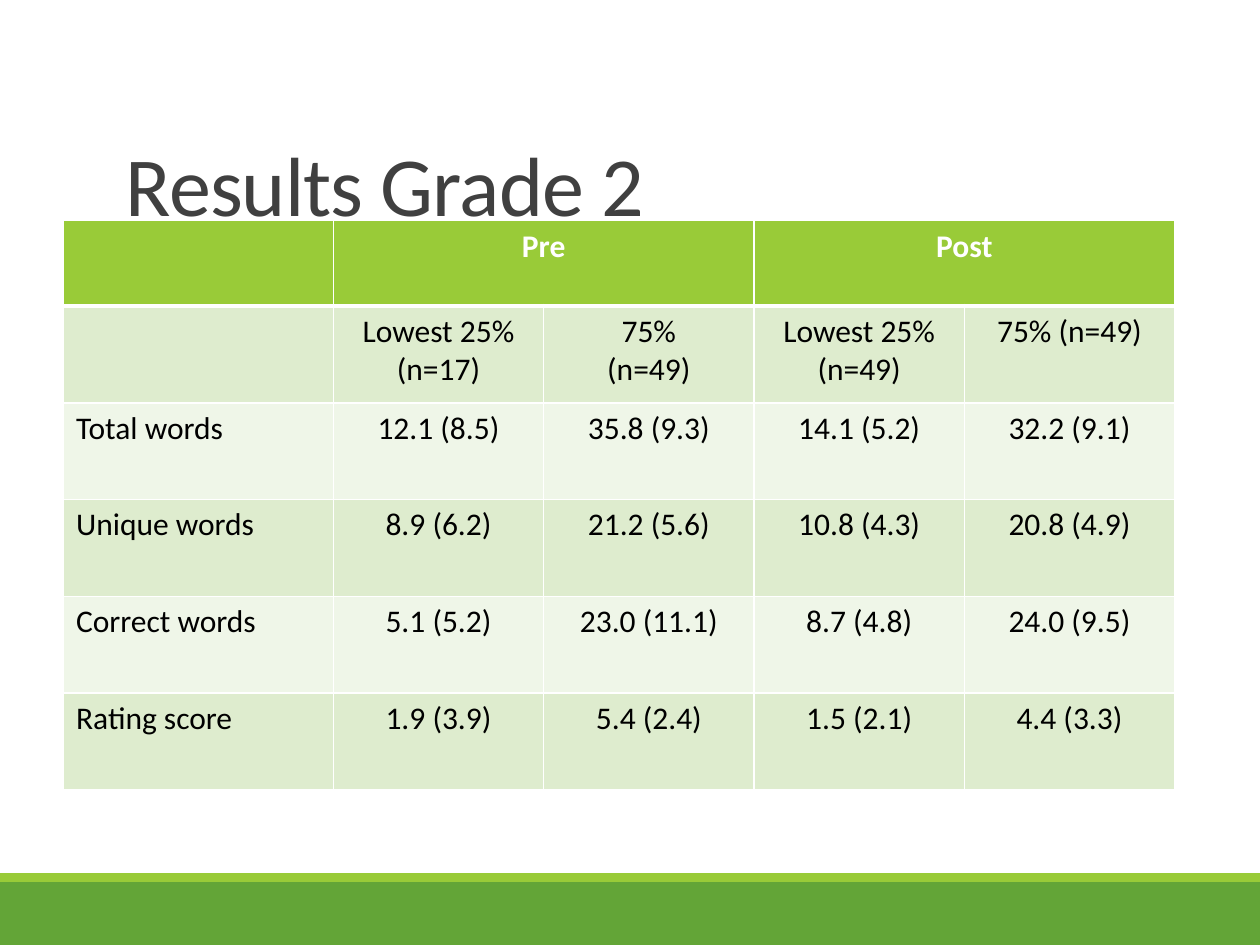
"""Build the Grade 2 results slide with its pre and post table."""
from lxml import etree
from pptx import Presentation
from pptx.dml.color import RGBColor
from pptx.enum.shapes import MSO_SHAPE
from pptx.enum.text import MSO_ANCHOR, PP_ALIGN
from pptx.oxml.ns import qn
from pptx.util import Cm, Pt

RECT = MSO_SHAPE.RECTANGLE
BOTTOM = MSO_ANCHOR.BOTTOM
LEFT, CENTER = PP_ALIGN.LEFT, PP_ALIGN.CENTER

FONT = "Calibri"
COLORS = {
    "green": "63A537", "lime": "99CB38", "title": "404040", "white": "FFFFFF",
    "black": "000000", "band_dark": "DEECCE", "band_light": "EFF6E8",
}
TITLE = "Results Grade 2"
ROWS = [
    ["", "Pre", "", "Post", ""],
    ["", "Lowest 25% (n=17)", "75%\n(n=49)", "Lowest 25% (n=49)", "75% (n=49)"],
    ["Total words", "12.1 (8.5)", "35.8 (9.3)", "14.1 (5.2)", "32.2 (9.1)"],
    ["Unique words", "8.9 (6.2)", "21.2 (5.6)", "10.8 (4.3)", "20.8 (4.9)"],
    ["Correct words", "5.1 (5.2)", "23.0 (11.1)", "8.7 (4.8)", "24.0 (9.5)"],
    ["Rating score", "1.9 (3.9)", "5.4 (2.4)", "1.5 (2.1)", "4.4 (3.3)"],
]
COL_WIDTHS = [5.44] + [4.24] * 4
ROW_HEIGHTS = [1.72] + [1.95] * 5
FOOTER_BANDS = [("green", 17.78, 1.27), ("lime", 17.6, 0.18)]


def rgb(name):
    return RGBColor.from_string(COLORS[name])


def add_run(p, text, size, color, bold=False):
    r = p.add_run()
    r.text = text
    r.font.name, r.font.size, r.font.bold = FONT, Pt(size), bold
    r.font.color.rgb = rgb(color)
    return r


def add_band(s, color, top, height):
    sp = s.shapes.add_shape(RECT, 0, Cm(top), Cm(25.4), Cm(height))
    sp.shadow.inherit = False
    sp.fill.solid()
    sp.fill.fore_color.rgb = rgb(color)
    sp.line.fill.background()


def add_title(s):
    sp = s.shapes.add_textbox(Cm(2.29), Cm(0.79), Cm(20.96), Cm(4.04))
    tf = sp.text_frame
    tf.word_wrap = True
    tf.vertical_anchor = BOTTOM
    p = tf.paragraphs[0]
    p.line_spacing = 0.85
    r = add_run(p, TITLE, 48, "title")
    r.font._element.set("spc", "-50")


def set_borders(cell, widths):
    tc_pr = cell._tc.get_or_add_tcPr()
    for side, width in widths.items():
        ln = etree.SubElement(tc_pr, qn(f"a:ln{side}"), w=str(Pt(width)))
        fill = etree.SubElement(ln, qn("a:solidFill"))
        etree.SubElement(fill, qn("a:srgbClr"), val=COLORS["white"])


def fill_cell(cell, text, row, col):
    header = row == 0
    set_borders(cell, {"L": 1, "R": 1, "T": 3 if row == 1 else 1, "B": 3 if header else 1})
    cell.fill.solid()
    band = "band_dark" if row % 2 else "band_light"
    cell.fill.fore_color.rgb = rgb("lime" if header else band)
    tf = cell.text_frame
    for i, line in enumerate(text.split("\n") if text else []):
        p = tf.add_paragraph() if i else tf.paragraphs[0]
        p.alignment = CENTER if col else LEFT
        add_run(p, line, 18, "white" if header else "black", header)


def add_results(s):
    table = s.shapes.add_table(
        len(ROWS), len(COL_WIDTHS), Cm(1.28), Cm(4.45),
        Cm(sum(COL_WIDTHS)), Cm(sum(ROW_HEIGHTS))).table
    for column, width in zip(table.columns, COL_WIDTHS):
        column.width = Cm(width)
    for row, height in zip(table.rows, ROW_HEIGHTS):
        row.height = Cm(height)
    for col in (1, 3):
        table.cell(0, col).merge(table.cell(0, col + 1))
    for i, texts in enumerate(ROWS):
        for j, text in enumerate(texts):
            fill_cell(table.cell(i, j), text, i, j)


def main():
    prs = Presentation()
    prs.slide_width, prs.slide_height = Cm(25.4), Cm(19.05)
    s = prs.slides.add_slide(prs.slide_layouts[6])
    for band in FOOTER_BANDS:
        add_band(s, *band)
    add_title(s)
    add_results(s)
    prs.save("out.pptx")


if __name__ == "__main__":
    main()
